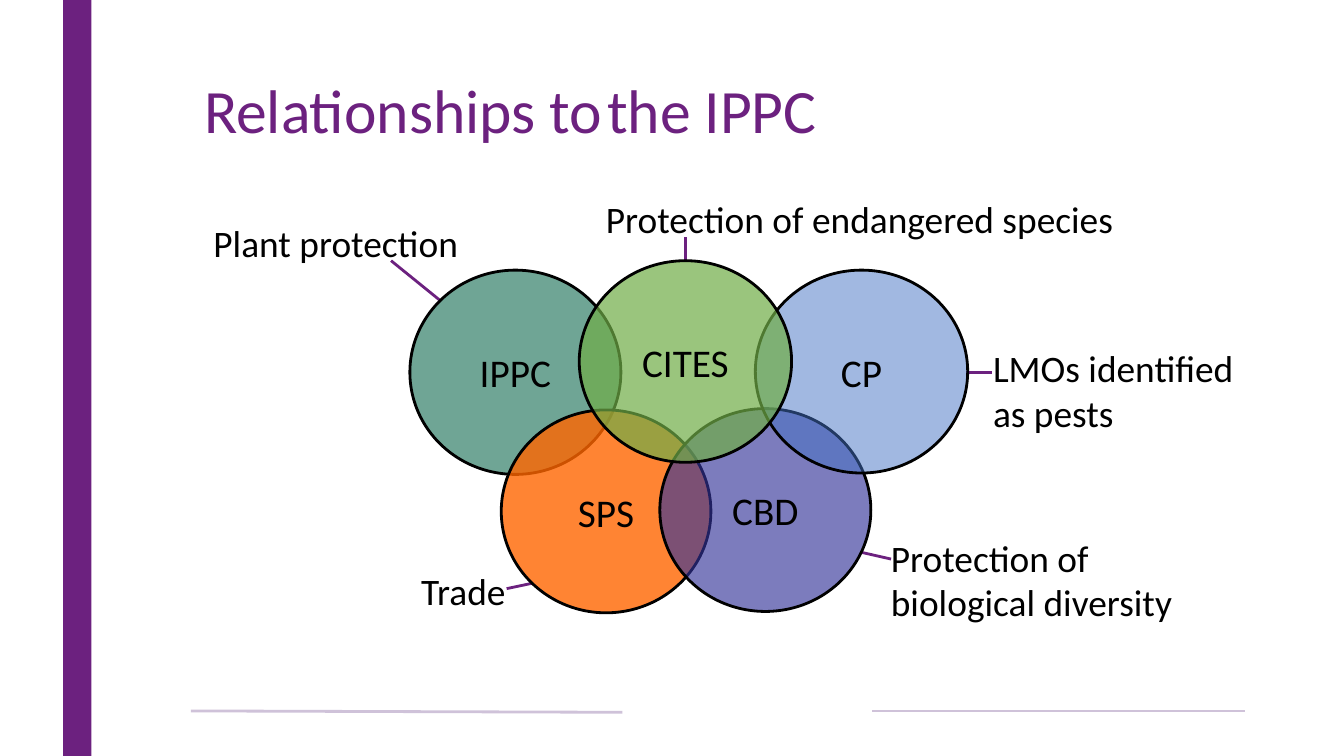
from dataclasses import dataclass

from lxml.etree import SubElement
from pptx import Presentation
from pptx.dml.color import RGBColor
from pptx.enum.shapes import MSO_CONNECTOR as Connector, MSO_SHAPE as Shape
from pptx.enum.text import MSO_ANCHOR as Anchor, PP_ALIGN as Align
from pptx.oxml.ns import qn
from pptx.util import Inches, Pt

SLIDE_WIDTH = 10
SLIDE_HEIGHT = SLIDE_WIDTH * 9 / 16


@dataclass(frozen=True)
class Theme:
    font: str = "Calibri"
    accent: str = "6C217F"
    rule: str = "CFC2D9"
    ink: str = "000000"
    plant: str = "337F69"
    trade: str = "FF6600"
    diversity: str = "333399"
    biosafety: str = "4472C4"
    species: str = "70AD47"
    title_size: float = 33
    circle_size: float = 21
    label_size: float = 20
    line_width: float = 1.5


def write_text(shape, text, *, font, size, color, align=Align.LEFT,
               anchor=Anchor.TOP, wrap=True, spacing=None):
    frame = shape.text_frame
    frame.word_wrap = wrap
    frame.vertical_anchor = anchor
    paragraph = frame.paragraphs[0]
    paragraph.alignment = align
    if spacing:
        paragraph.line_spacing = spacing
    run = paragraph.add_run()
    run.text = text
    run.font.name = font
    run.font.size = Pt(size)
    run.font.color.rgb = RGBColor.from_string(color)


class SlideBuilder:
    def __init__(self, slide, theme):
        self.slide = slide
        self.theme = theme

    def shape(self, kind, box, color, opacity=100):
        shape = self.slide.shapes.add_shape(kind, *map(Inches, box))
        shape.shadow.inherit = False
        shape.fill.solid()
        shape.fill.fore_color.rgb = RGBColor.from_string(color)
        if opacity < 100:
            color_element = shape.fill._xPr.find(qn("a:solidFill"))[0]
            SubElement(color_element, qn("a:alpha"), val=str(opacity * 1000))
        shape.line.fill.background()
        return shape

    def circle(self, text, box, color, opacity, kind=Shape.OVAL, wrap=False):
        theme = self.theme
        circle = self.shape(kind, box, color, opacity)
        circle.line.color.rgb = RGBColor.from_string(theme.ink)
        circle.line.width = Pt(theme.line_width)
        write_text(circle, text, font=theme.font, size=theme.circle_size,
                   color=theme.ink, align=Align.CENTER, anchor=Anchor.MIDDLE,
                   wrap=wrap)

    def line(self, start, end, color):
        line = self.slide.shapes.add_connector(
            Connector.STRAIGHT, *map(Inches, (*start, *end)))
        line.line.color.rgb = RGBColor.from_string(color)
        line.line.width = Pt(self.theme.line_width)
        SubElement(line._element.spPr, qn("a:effectLst"))

    def text(self, text, box, **text_format):
        textbox = self.slide.shapes.add_textbox(*map(Inches, box))
        write_text(textbox, text, font=self.theme.font, **text_format)

    def label(self, text, box, align=Align.LEFT):
        self.text(text, box, size=self.theme.label_size,
                  color=self.theme.ink, align=align)


def main():
    theme = Theme()
    presentation = Presentation()
    presentation.slide_width = Inches(SLIDE_WIDTH)
    presentation.slide_height = Inches(SLIDE_HEIGHT)
    slide = presentation.slides.add_slide(presentation.slide_layouts[6])
    builder = SlideBuilder(slide, theme)

    builder.shape(Shape.RECTANGLE, (0.47, 0, 0.21, SLIDE_HEIGHT), theme.accent)
    builder.line((4.63, 5.3), (1.42, 5.29), theme.rule)
    builder.line((6.49, 5.29), (9.26, 5.29), theme.rule)
    builder.text("Relationships to\tthe IPPC", (1.42, 0.3, 7.84, 1.09),
                 size=theme.title_size, color=theme.accent,
                 anchor=Anchor.MIDDLE, spacing=0.9)

    callouts = [
        ((2.91, 1.94), (3.28, 2.24)),
        ((5.1, 1.94), (5.1, 1.76)),
        ((7.19, 2.77), (7.38, 2.77)),
        ((6.41, 4.11), (6.63, 4.16)),
        ((3.96, 4.34), (3.77, 4.38)),
    ]
    for start, end in callouts:
        builder.line(start, end, theme.accent)

    builder.circle("IPPC", (3.05, 2.01, 1.57, 1.52), theme.plant, 70)
    builder.circle("SPS", (3.73, 3.05, 1.56, 1.51), theme.trade, 80)
    builder.circle("CBD", (4.91, 3.04, 1.57, 1.51), theme.diversity, 64)
    builder.circle("CP", (5.62, 2.01, 1.58, 1.51), theme.biosafety, 50)
    builder.circle("CITES", (4.31, 1.94, 1.58, 1.5), theme.species, 70,
                   kind=Shape.FLOWCHART_CONNECTOR, wrap=True)

    builder.label("Plant protection", (1.49, 1.59, 2.06, 0.4))
    builder.label("Protection of endangered species", (4.41, 1.41, 4.52, 0.44))
    builder.label("LMOs identified as pests", (7.29, 2.52, 2.15, 0.77))
    builder.label("Protection of biological diversity", (6.53, 3.93, 2.55, 0.71))
    builder.label("Trade", (2.62, 4.18, 1.24, 0.35), align=Align.RIGHT)

    presentation.save("out.pptx")


if __name__ == "__main__":
    main()
